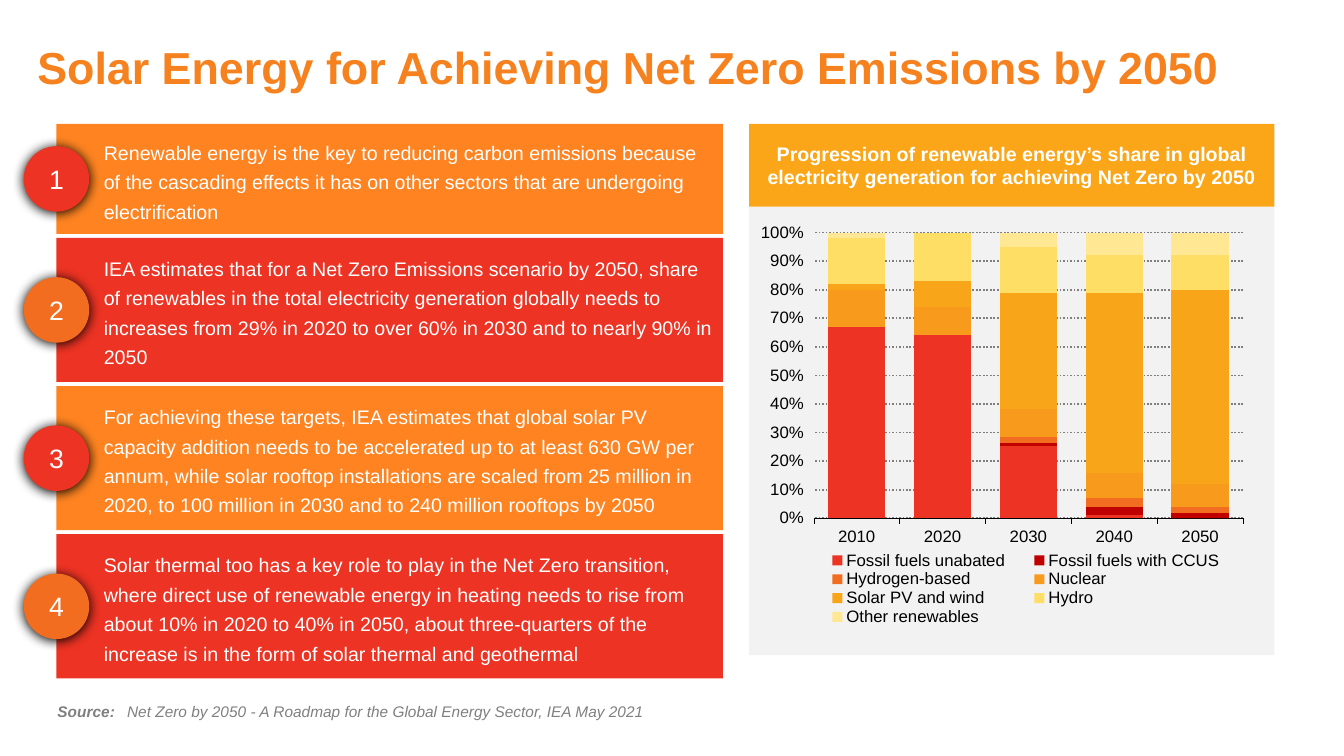
from dataclasses import dataclass

from pptx import Presentation
from pptx.chart.data import CategoryChartData
from pptx.dml.color import RGBColor
from pptx.enum.chart import XL_CHART_TYPE, XL_LEGEND_POSITION, XL_TICK_MARK
from pptx.enum.dml import MSO_LINE
from pptx.enum.shapes import MSO_SHAPE
from pptx.enum.text import MSO_ANCHOR, MSO_AUTO_SIZE, PP_ALIGN
from pptx.oxml import parse_xml
from pptx.util import Inches, Pt

RECTANGLE, OVAL = MSO_SHAPE.RECTANGLE, MSO_SHAPE.OVAL
MIDDLE = MSO_ANCHOR.MIDDLE
LEFT, CENTER = PP_ALIGN.LEFT, PP_ALIGN.CENTER
STACKED_100 = XL_CHART_TYPE.COLUMN_STACKED_100
LEGEND_BOTTOM = XL_LEGEND_POSITION.BOTTOM
TICK_OUTSIDE = XL_TICK_MARK.OUTSIDE
DOTTED = MSO_LINE.ROUND_DOT
DRAWING_NS = 'xmlns:a="http://schemas.openxmlformats.org/drawingml/2006/main"'
CHART_NS = 'xmlns:c="http://schemas.openxmlformats.org/drawingml/2006/chart"'


@dataclass(frozen=True)
class Theme:
    font: str = "Arial"
    title: str = "F5821F"
    orange: str = "FF8421"
    red: str = "ED3323"
    badge_orange: str = "F26D20"
    header: str = "FAA618"
    panel: str = "F2F2F2"
    white: str = "FFFFFF"
    black: str = "000000"
    gray: str = "808080"
    grid: str = "7F7F7F"
    title_size: int = 32
    body_size: int = 14
    badge_size: int = 19
    chart_size: int = 12
    source_size: int = 11


THEME = Theme()

CARDS = [
    (1.09, "Renewable energy is the key to reducing carbon emissions because of the cascading "
           "effects it has on other sectors that are undergoing electrification"),
    (1.43, "IEA estimates that for a Net Zero Emissions scenario by 2050, share of renewables in "
           "the total electricity generation globally needs to increases from 29% in 2020 to over "
           "60% in 2030 and to nearly 90% in 2050"),
    (1.43, "For achieving these targets, IEA estimates that global solar PV capacity addition "
           "needs to be accelerated up to at least 630 GW per annum, while solar rooftop "
           "installations are scaled from 25 million in 2020, to 100 million in 2030 and to 240 "
           "million rooftops by 2050"),
    (1.43, "Solar thermal too has a key role to play in the Net Zero transition, where direct use "
           "of renewable energy in heating needs to rise from about 10% in 2020 to 40% in 2050, "
           "about three‐quarters of the increase is in the form of solar thermal and geothermal"),
]
YEARS = ["2010", "2020", "2030", "2040", "2050"]
SHARES = [
    ("Fossil fuels unabated", [67, 64, 25, 1, 0], "ED3323"),
    ("Fossil fuels with CCUS", [0, 0, 1, 3, 2], "C00000"),
    ("Hydrogen-based", [0, 0, 2, 3, 2], "F26D20"),
    ("Nuclear", [13, 10, 10, 9, 8], "F89A1B"),
    ("Solar PV and wind", [2, 9, 40, 63, 68], "F9A51A"),
    ("Hydro", [16, 17, 16, 13, 12], "FFDE65"),
    ("Other renewables", [2, 0, 5, 8, 8], "FFE794"),
]


def color(code):
    return RGBColor.from_string(code)


def style_font(font, size, code, bold=False, italic=False):
    font.name, font.size = THEME.font, Pt(size)
    font.color.rgb = color(code)
    font.bold, font.italic = bold, italic


def add_run(paragraph, text, size, code, **style):
    run = paragraph.add_run()
    run.text = text
    style_font(run.font, size, code, **style)


def set_margins(frame, left, top, right, bottom):
    frame.margin_left, frame.margin_top = Inches(left), Inches(top)
    frame.margin_right, frame.margin_bottom = Inches(right), Inches(bottom)


def add_block(slide, kind, box, fill):
    shape = slide.shapes.add_shape(kind, *map(Inches, box))
    shape.shadow.inherit = False
    shape.fill.solid()
    shape.fill.fore_color.rgb = color(fill)
    shape.line.fill.background()
    shape.text_frame.word_wrap = True
    shape.text_frame.vertical_anchor = MIDDLE
    return shape


def add_title(slide, box):
    title = slide.shapes.title
    title.left, title.top, title.width, title.height = map(Inches, box)
    frame = title.text_frame
    frame.auto_size = MSO_AUTO_SIZE.NONE
    frame.vertical_anchor = MIDDLE
    set_margins(frame, 0, 0, 0, 0)
    paragraph = frame.paragraphs[0]
    paragraph.alignment = LEFT
    add_run(paragraph, "Solar Energy for Achieving Net Zero Emissions by 2050",
            THEME.title_size, THEME.title, bold=True)


def add_card(slide, box, text, fill):
    frame = add_block(slide, RECTANGLE, box, fill).text_frame
    set_margins(frame, 0.16, 0.05, 0.1, 0.05)
    paragraph = frame.paragraphs[0]
    paragraph.alignment, paragraph.line_spacing = LEFT, 1.25
    paragraph._p.get_or_add_pPr().set("marL", str(Inches(0.31)))
    add_run(paragraph, text, THEME.body_size, THEME.white)


def add_badge(slide, center_x, center_y, number, fill, diameter=0.65):
    box = (center_x - diameter / 2, center_y - diameter / 2, diameter, diameter)
    badge = add_block(slide, OVAL, box, fill)
    # Replace the empty effect list with a soft shadow
    properties = badge._element.spPr
    properties.remove(properties.xpath("a:effectLst")[0])
    properties.append(parse_xml(
        f'<a:effectLst {DRAWING_NS}><a:outerShdw blurRad="{Pt(8.5)}" dist="{Pt(1)}" '
        f'dir="5400000" algn="ctr" rotWithShape="0"><a:srgbClr val="{THEME.black}"/>'
        '</a:outerShdw></a:effectLst>'))
    paragraph = badge.text_frame.paragraphs[0]
    paragraph.alignment = CENTER
    add_run(paragraph, str(number), THEME.badge_size, THEME.white)


def add_cards(slide, left, top, width, gap=0.04):
    for index, (height, text) in enumerate(CARDS):
        card_fill, badge_fill = ((THEME.orange, THEME.red), (THEME.red, THEME.badge_orange))[index % 2]
        add_card(slide, (left, top, width, height), text, card_fill)
        add_badge(slide, left, top + height / 2, index + 1, badge_fill)
        top += height + gap


def manual_layout(x, y, width, height, target=""):
    return parse_xml(
        f'<c:layout {CHART_NS}><c:manualLayout>{target}<c:xMode val="edge"/><c:yMode val="edge"/>'
        f'<c:x val="{x}"/><c:y val="{y}"/><c:w val="{width}"/><c:h val="{height}"/>'
        '</c:manualLayout></c:layout>')


def add_share_chart(slide, box):
    data = CategoryChartData()
    data.categories = YEARS
    for name, values, _ in SHARES:
        data.add_series(name, values)
    chart = slide.shapes.add_chart(STACKED_100, *map(Inches, box), data).chart
    chart.has_title = False
    style_font(chart.font, THEME.chart_size, THEME.black)

    # Columns
    plot = chart.plots[0]
    plot.gap_width, plot.overlap, plot.vary_by_categories = 50, 100, False
    for series, (_, _, fill) in zip(plot.series, SHARES):
        series.format.fill.solid()
        series.format.fill.fore_color.rgb = color(fill)

    # Axes
    years, shares = chart.category_axis, chart.value_axis
    years.major_tick_mark = shares.major_tick_mark = TICK_OUTSIDE
    years.format.line.color.rgb = color(THEME.black)
    years.format.line.width = Pt(0.25)
    shares.minimum_scale, shares.maximum_scale, shares.major_unit = 0, 1, 0.1
    shares.tick_labels.number_format = "0%"
    shares.tick_labels.number_format_is_linked = False
    shares.format.line.fill.background()
    grid = shares.major_gridlines.format.line
    grid.color.rgb, grid.width, grid.dash_style = color(THEME.grid), Pt(1.25), DOTTED

    # Legend and plot positions
    chart.has_legend = True
    chart.legend.position = LEGEND_BOTTOM
    chart.legend.include_in_layout = False
    space = chart._chartSpace
    space.xpath("c:chart/c:legend/c:legendPos")[0].addnext(manual_layout(0.1, 0.8, 0.86, 0.19))
    plot_area = space.xpath("c:chart/c:plotArea")[0]
    for layout in plot_area.xpath("c:layout"):
        plot_area.remove(layout)
    plot_area.insert(0, manual_layout(0.11, 0.01, 0.85, 0.71, '<c:layoutTarget val="inner"/>'))


def add_chart_panel(slide, left, top, width, height, header_height=0.82):
    add_block(slide, RECTANGLE,
              (left, top + header_height, width, height - header_height), THEME.panel)
    header = add_block(slide, RECTANGLE, (left, top, width, header_height), THEME.header)
    paragraph = header.text_frame.paragraphs[0]
    paragraph.alignment = CENTER
    add_run(paragraph, "Progression of renewable energy’s share in global electricity generation "
            "for achieving Net Zero by 2050", THEME.body_size, THEME.white, bold=True)
    add_share_chart(slide, (left + 0.09, top + 0.99, width - 0.2, height - 1.23))


def add_source(slide, box):
    frame = slide.shapes.add_textbox(*map(Inches, box)).text_frame
    frame.word_wrap = True
    set_margins(frame, 0.05, 0.05, 0.05, 0.05)
    paragraph = frame.paragraphs[0]
    paragraph._p.get_or_add_pPr().append(parse_xml(
        f'<a:tabLst {DRAWING_NS}><a:tab pos="{Inches(0.69)}" algn="l"/></a:tabLst>'))
    add_run(paragraph, "Source:", THEME.source_size, THEME.gray, bold=True, italic=True)
    add_run(paragraph, "\tNet Zero by 2050 - A Roadmap for the Global Energy Sector, IEA May 2021",
            THEME.source_size, THEME.gray, italic=True)


def main():
    presentation = Presentation()
    presentation.slide_width, presentation.slide_height = Inches(13.33), Inches(7.5)
    slide = presentation.slides.add_slide(presentation.slide_layouts[5])
    add_title(slide, (0.37, 0.38, 12.82, 0.56))
    add_cards(slide, left=0.56, top=1.23, width=6.61)
    add_chart_panel(slide, left=7.43, top=1.23, width=5.21, height=5.27)
    add_source(slide, (0.52, 6.92, 6.59, 0.29))
    presentation.save("out.pptx")


if __name__ == "__main__":
    main()
